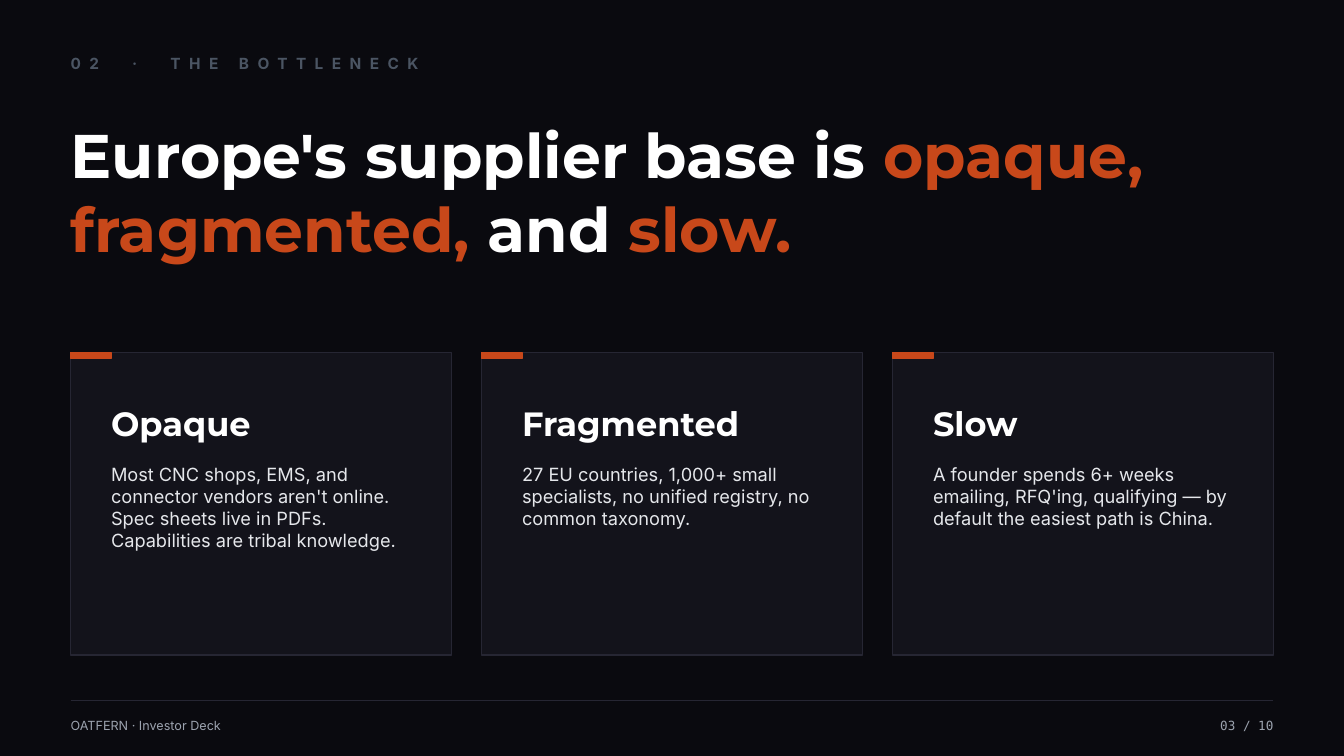
from dataclasses import dataclass

from lxml.etree import SubElement
from pptx import Presentation
from pptx.dml.color import RGBColor as Rgb
from pptx.enum.shapes import MSO_CONNECTOR as Connector, MSO_SHAPE as Preset
from pptx.enum.text import MSO_ANCHOR as Anchor, MSO_AUTO_SIZE as AutoSize, PP_ALIGN as Align
from pptx.oxml.ns import qn
from pptx.util import Cm, Pt


@dataclass(frozen=True)
class Theme:
    background: Rgb = Rgb(0x0A, 0x0A, 0x0F)
    panel: Rgb = Rgb(0x13, 0x13, 0x1B)
    border: Rgb = Rgb(0x26, 0x26, 0x33)
    accent: Rgb = Rgb(0xC8, 0x48, 0x1A)
    white: Rgb = Rgb(0xFF, 0xFF, 0xFF)
    body: Rgb = Rgb(0xE5, 0xE7, 0xEB)
    muted: Rgb = Rgb(0x9C, 0xA3, 0xAF)
    dim: Rgb = Rgb(0x4B, 0x55, 0x63)
    heading_font: str = "Montserrat"
    text_font: str = "Inter"
    number_font: str = "DejaVu Sans Mono"
    title_size: int = 44
    card_title_size: int = 24
    body_size: int = 13
    section_size: int = 11
    footer_size: int = 9


THEME = Theme()
SLIDE_WIDTH, SLIDE_HEIGHT = 33.87, 19.05
MARGIN = 1.78
CONTENT_WIDTH = SLIDE_WIDTH - 2 * MARGIN
CARD_TOP, CARD_HEIGHT, CARD_GAP, CARD_PADDING = 8.89, 7.62, 0.76, 1.02
FOOTER_TOP, FOOTER_HEIGHT = 17.91, 0.76

SECTION_TRACKING, SECTION_GAP = 600, 1500
SECTION = [("02", SECTION_TRACKING), (" ", SECTION_GAP), ("·", SECTION_TRACKING),
           (" ", SECTION_GAP), ("THE BOTTLENECK", SECTION_TRACKING)]
HEADLINE = [
    ("Europe's supplier base is ", THEME.white),
    ("opaque, fragmented, ", THEME.accent),
    ("and ", THEME.white),
    ("slow.", THEME.accent),
]
CARDS = [
    ("Opaque", "Most CNC shops, EMS, and connector vendors aren't online. "
               "Spec sheets live in PDFs. Capabilities are tribal knowledge."),
    ("Fragmented", "27 EU countries, 1,000+ small specialists, no unified registry, "
                   "no common taxonomy."),
    ("Slow", "A founder spends 6+ weeks emailing, RFQ'ing, qualifying — "
             "by default the easiest path is China."),
]


def set_all(target, values):
    for name, value in values.items():
        setattr(target, name, value)


def prepare_frame(frame, anchor):
    """Clear the insets, fix the size and return the first paragraph."""
    set_all(frame, {
        "margin_left": 0, "margin_top": 0, "margin_right": 0, "margin_bottom": 0,
        "word_wrap": True, "auto_size": AutoSize.NONE, "vertical_anchor": anchor,
    })
    return frame.paragraphs[0]


def add_run(paragraph, text, font, size, color, bold=False):
    run = paragraph.add_run()
    run.text = text
    set_all(run.font, {"name": font, "size": Pt(size), "bold": bold})
    run.font.color.rgb = color
    return run


def add_text_box(slide, left, top, width, height, anchor=Anchor.MIDDLE):
    box = slide.shapes.add_textbox(Cm(left), Cm(top), Cm(width), Cm(height))
    return prepare_frame(box.text_frame, anchor)


def add_box(slide, left, top, width, height, fill, line):
    box = slide.shapes.add_shape(Preset.RECTANGLE, Cm(left), Cm(top), Cm(width), Cm(height))
    box.shadow.inherit = False
    box.fill.solid()
    box.fill.fore_color.rgb = fill
    box.line.color.rgb = line
    box.line.width = Pt(1)


def add_section_label(slide):
    label = add_text_box(slide, MARGIN, 1.14, CONTENT_WIDTH, 0.89)
    for text, tracking in SECTION:
        run = add_run(label, text, THEME.text_font, THEME.section_size, THEME.dim, bold=True)
        run.font._element.set("spc", str(tracking))


def add_headline(slide):
    title = slide.shapes.title
    set_all(title, {"left": Cm(MARGIN), "top": Cm(2.79),
                    "width": Cm(CONTENT_WIDTH), "height": Cm(4.06)})
    headline = prepare_frame(title.text_frame, Anchor.MIDDLE)
    headline.alignment = Align.LEFT
    for text, color in HEADLINE:
        add_run(headline, text, THEME.heading_font, THEME.title_size, color, bold=True)


def add_card(slide, left, width, heading, description):
    add_box(slide, left, CARD_TOP, width, CARD_HEIGHT, THEME.panel, THEME.border)
    add_box(slide, left, CARD_TOP, CARD_PADDING, 0.15, THEME.accent, THEME.accent)
    text_left, text_width = left + CARD_PADDING, width - 2 * CARD_PADDING
    title = add_text_box(slide, text_left, CARD_TOP + CARD_PADDING, text_width, 1.52)
    add_run(title, heading, THEME.heading_font, THEME.card_title_size, THEME.white, bold=True)
    body = add_text_box(slide, text_left, CARD_TOP + 2.79, text_width, 4.06, Anchor.TOP)
    body.space_after = Pt(4)
    add_run(body, description, THEME.text_font, THEME.body_size, THEME.body)


def add_cards(slide):
    width = (CONTENT_WIDTH - CARD_GAP * (len(CARDS) - 1)) / len(CARDS)
    for index, (heading, description) in enumerate(CARDS):
        add_card(slide, MARGIN + index * (width + CARD_GAP), width, heading, description)


def add_footer(slide):
    right, rule_y = MARGIN + CONTENT_WIDTH, Cm(17.65)
    rule = slide.shapes.add_connector(Connector.STRAIGHT, Cm(MARGIN), rule_y, Cm(right), rule_y)
    rule.line.color.rgb = THEME.border
    rule.line.width = Pt(0.5)
    SubElement(rule._element.spPr, qn("a:effectLst"))

    deck_name = add_text_box(slide, MARGIN, FOOTER_TOP, 10.16, FOOTER_HEIGHT)
    add_run(deck_name, "OATFERN · Investor Deck", THEME.text_font, THEME.footer_size, THEME.muted)
    number_width = 3.81
    page = add_text_box(slide, right - number_width, FOOTER_TOP, number_width, FOOTER_HEIGHT)
    page.alignment = Align.RIGHT
    add_run(page, "03 / 10", THEME.number_font, THEME.footer_size, THEME.muted)


def main():
    deck = Presentation()
    set_all(deck, {"slide_width": Cm(SLIDE_WIDTH), "slide_height": Cm(SLIDE_HEIGHT)})
    title_only = deck.slide_layouts[5]
    slide = deck.slides.add_slide(title_only)
    slide.background.fill.solid()
    slide.background.fill.fore_color.rgb = THEME.background
    add_section_label(slide)
    add_headline(slide)
    add_cards(slide)
    add_footer(slide)
    deck.save("out.pptx")


if __name__ == "__main__":
    main()
